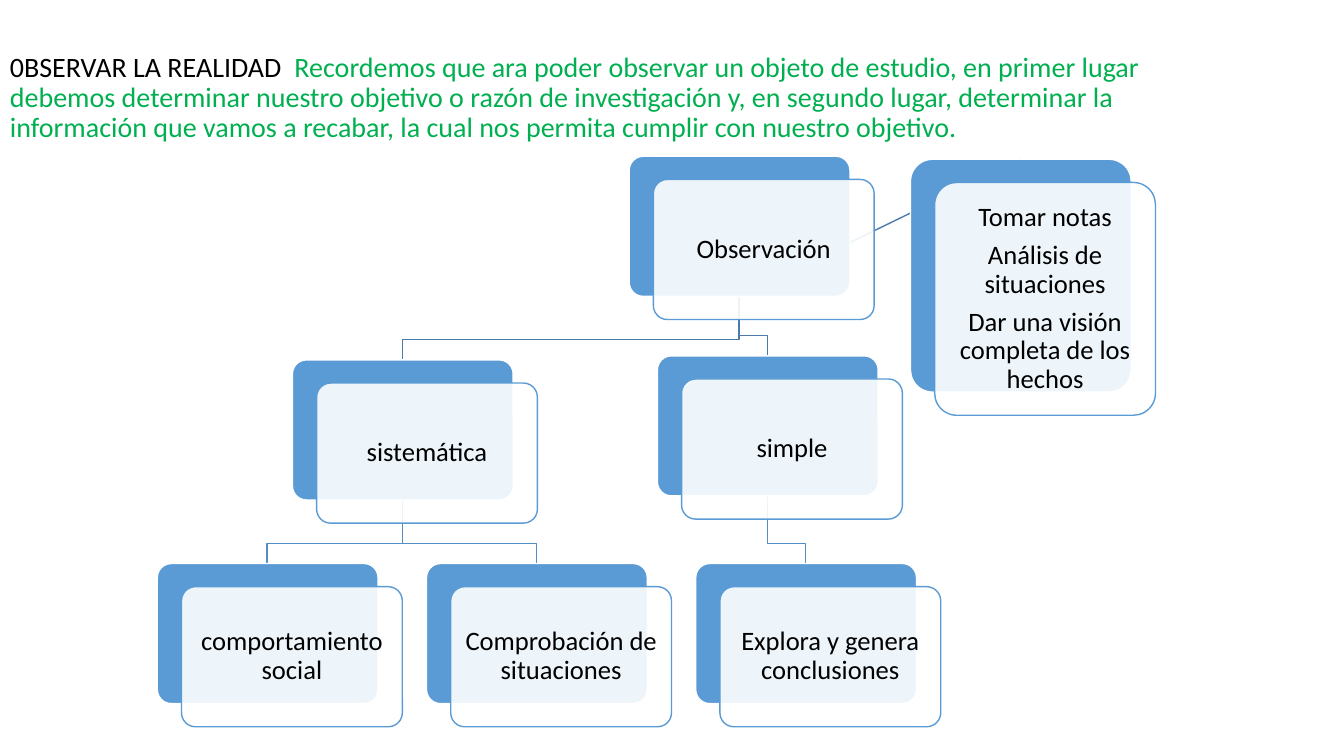
import dataclasses

import lxml.etree
import pptx
import pptx.dml.color
import pptx.enum.shapes
import pptx.enum.text
import pptx.oxml.ns
import pptx.util


@dataclasses.dataclass(frozen=True)
class Theme:
    font: str = "Calibri"
    title_size: float = 20
    card_size: float = 19
    paragraph_gap: float = 6.65
    line_width: float = 1
    black: str = "000000"
    white: str = "FFFFFF"
    green: str = "00B050"
    blue: str = "5B9BD5"
    upper_link: str = "497CAB"
    lower_link: str = "538DC1"


theme = Theme()
PX = 9144
CARD_WIDTH = 219
FRONT_DX, FRONT_DY = 24, 23
BEND = 20
INSET = 8


def color(value):
    return pptx.dml.color.RGBColor.from_string(value)


def add_card(left, top, height, fill, line):
    shape = slide.shapes.add_shape(
        pptx.enum.shapes.MSO_SHAPE.ROUNDED_RECTANGLE,
        left * PX, top * PX, CARD_WIDTH * PX, height * PX)
    shape.adjustments[0] = 0.1
    shape.shadow.inherit = False
    shape.fill.solid()
    shape.fill.fore_color.rgb = color(fill)
    shape.line.color.rgb = color(line)
    shape.line.width = pptx.util.Pt(theme.line_width)
    return shape


presentation = pptx.Presentation()
presentation.slide_width = 1333 * PX
presentation.slide_height = 750 * PX
slide = presentation.slides.add_slide(presentation.slide_layouts[6])

title = slide.shapes.add_textbox(0, 40 * PX, 1150 * PX, 145 * PX)
title_frame = title.text_frame
title_frame.word_wrap = True
title_frame.vertical_anchor = pptx.enum.text.MSO_ANCHOR.MIDDLE
title_frame.margin_bottom = 35 * PX
paragraph = title_frame.paragraphs[0]
paragraph.line_spacing = 0.9
paragraph.font.name = theme.font
paragraph.font.size = pptx.util.Pt(theme.title_size)
for text, text_color in [
    ("0BSERVAR LA REALIDAD  ", theme.black),
    ("Recordemos que ara poder observar un objeto de estudio, en primer lugar "
     "debemos determinar nuestro objetivo o razón de investigación y, en segundo lugar, "
     "determinar la información que vamos a recabar, la cual nos permita cumplir con "
     "nuestro objetivo.", theme.green),
]:
    run = paragraph.add_run()
    run.text = text
    run.font.color.rgb = color(text_color)

cards = {
    "observación": (624, 155, 139, ["Observación"]),
    "sistemática": (290, 357, 139, ["sistemática"]),
    "comportamiento": (156, 559, 139, ["comportamiento social"]),
    "comprobación": (423, 559, 139, ["Comprobación de situaciones"]),
    "simple": (652, 353, 139, ["simple"]),
    "explora": (690, 559, 139, ["Explora y genera conclusiones"]),
    "notas": (903, 158, 231, [
        "Tomar notas",
        "Análisis de situaciones",
        "Dar una visión completa de los hechos",
    ]),
}
bottoms = {name: (left + CARD_WIDTH // 2, top + height)
           for name, (left, top, height, lines) in cards.items()}
tops = {name: (left + CARD_WIDTH // 2, top)
        for name, (left, top, height, lines) in cards.items()}

notes_link = slide.shapes.add_connector(
    pptx.enum.shapes.MSO_CONNECTOR.STRAIGHT,
    *(value * PX for value in bottoms["observación"] + tops["notas"]))
notes_link.line.color.rgb = color(theme.upper_link)
notes_link.line.width = pptx.util.Pt(theme.line_width)
lxml.etree.SubElement(notes_link._element.spPr, pptx.oxml.ns.qn("a:effectLst"))

for parent, child, link_color in [
    ("simple", "explora", theme.lower_link),
    ("observación", "simple", theme.upper_link),
    ("sistemática", "comprobación", theme.lower_link),
    ("sistemática", "comportamiento", theme.lower_link),
    ("observación", "sistemática", theme.upper_link),
]:
    start_x, start_y = bottoms[parent]
    end_x, end_y = tops[child]
    builder = slide.shapes.build_freeform(start_x, start_y, scale=PX)
    builder.add_line_segments(
        [(start_x, end_y - BEND), (end_x, end_y - BEND), (end_x, end_y)], close=False)
    link = builder.convert_to_shape()
    link.shadow.inherit = False
    link.fill.background()
    link.line.color.rgb = color(link_color)
    link.line.width = pptx.util.Pt(theme.line_width)

backs = {}
for name, (left, top, height, lines) in cards.items():
    backs[name] = add_card(left, top, height, theme.blue, theme.white)
    front = add_card(left + FRONT_DX, top + FRONT_DY, height, theme.white, theme.blue)
    fill_color = front._element.spPr.find(
        pptx.oxml.ns.qn("a:solidFill") + "/" + pptx.oxml.ns.qn("a:srgbClr"))
    lxml.etree.SubElement(fill_color, pptx.oxml.ns.qn("a:alpha"), val="90000")
    frame = front.text_frame
    frame.word_wrap = True
    frame.vertical_anchor = pptx.enum.text.MSO_ANCHOR.MIDDLE
    frame.margin_left = frame.margin_right = INSET * PX
    frame.margin_top = frame.margin_bottom = INSET * PX
    frame.text = "\n".join(lines)
    for paragraph in frame.paragraphs:
        paragraph.alignment = pptx.enum.text.PP_ALIGN.CENTER
        paragraph.line_spacing = 0.9
        paragraph.space_after = pptx.util.Pt(theme.paragraph_gap)
        paragraph.font.name = theme.font
        paragraph.font.size = pptx.util.Pt(theme.card_size)
        paragraph.font.color.rgb = color(theme.black)

notes_link.begin_connect(backs["observación"], 2)
notes_link.end_connect(backs["notas"], 0)

presentation.save("out.pptx")
